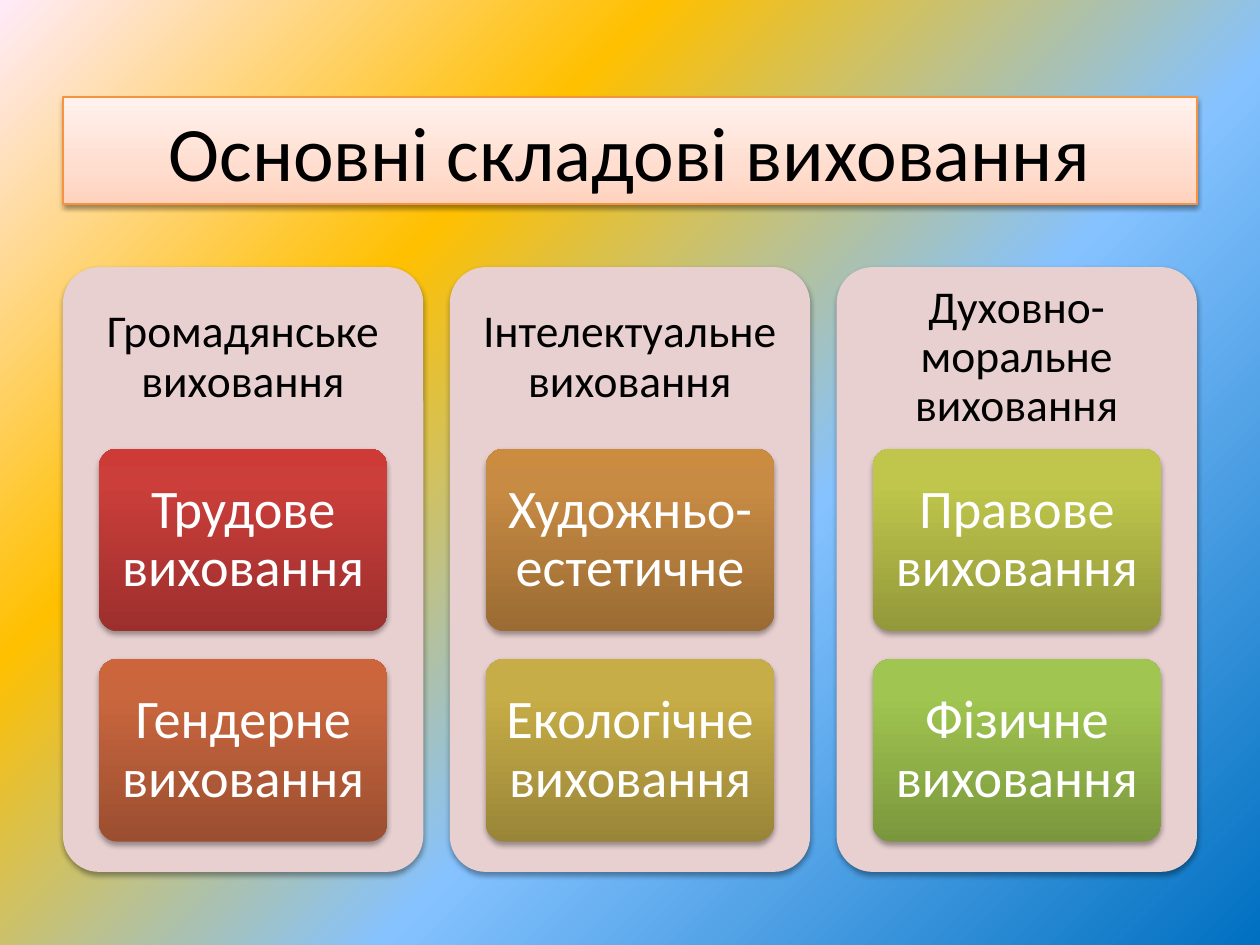
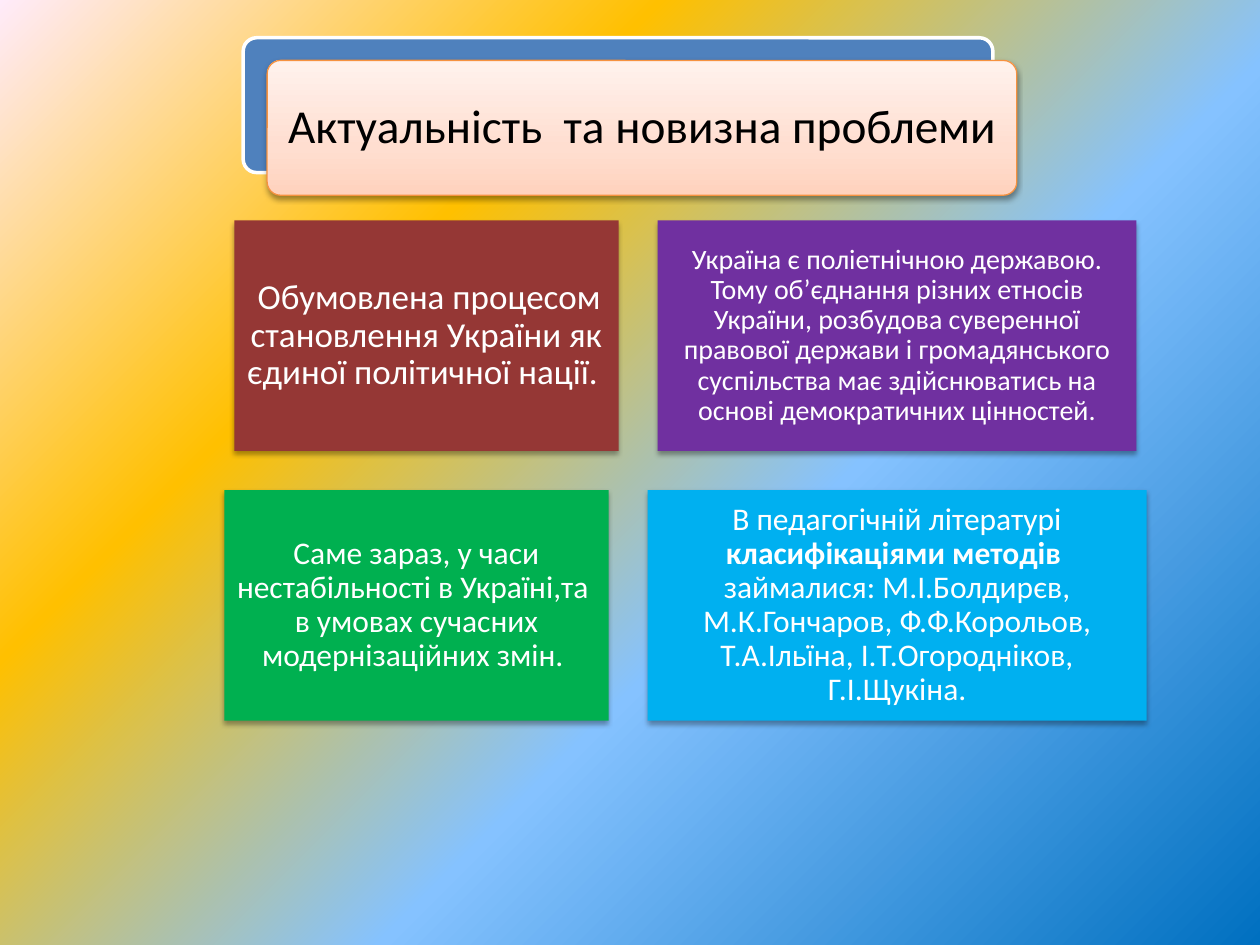
import dataclasses
import typing

import pptx
import pptx.dml.color
import pptx.enum.shapes
import pptx.enum.text
import pptx.oxml
import pptx.oxml.ns
import pptx.util

Inches = pptx.util.Inches
Pt = pptx.util.Pt
qn = pptx.oxml.ns.qn
MSO_SHAPE = pptx.enum.shapes.MSO_SHAPE
Stops = tuple[tuple[int, str], ...]
Fill = typing.Union[str, Stops]


@dataclasses.dataclass(frozen=True)
class Theme:
    font: str = "Calibri"
    dark: str = "000000"
    light: str = "FFFFFF"
    column: str = "E8D0D0"
    backing: str = "4F81BD"
    peach_line: str = "F69240"
    peach: Stops = ((0, "FFD2BD"), (35, "FFDED0"), (100, "FFF2ED"))
    backdrop: Stops = ((0, "0070C0"), (40, "85C2FF"), (70, "FFC000"), (100, "FFEBFA"))
    title: int = 44
    cell: int = 31
    plate: int = 27
    heading: int = 26
    corner: float = 0.1
    line_spacing: float = 0.9


T = Theme()


@dataclasses.dataclass(frozen=True)
class Box:
    x: float
    y: float
    w: float
    h: float


@dataclasses.dataclass(frozen=True)
class Shadow:
    alpha: int = 35
    dist: float = 1.8
    blur: float = 3.1


@dataclasses.dataclass(frozen=True)
class Span:
    text: str
    size: int
    bold: bool = False


@dataclasses.dataclass(frozen=True)
class Cell:
    text: str
    stops: Stops


@dataclasses.dataclass(frozen=True)
class Column:
    heading: str
    cells: tuple[Cell, ...]


@dataclasses.dataclass(frozen=True)
class Panel:
    width: float
    color: str
    spans: tuple[Span, ...]
    inset: float = 0.07


SOFT = Shadow()
PEACH_SHADOW = Shadow(alpha=38, dist=1.6)


def rgb(color: str) -> pptx.dml.color.RGBColor:
    return pptx.dml.color.RGBColor.from_string(color)


# ---- Shared drawing helpers ----
def set_gradient(owner, fill, stops: Stops, geometry: str) -> None:
    """Give a fill any number of stops; geometry is its a:lin or a:path element."""
    fill.gradient()
    old = next(owner.iter(qn("a:gradFill")))
    marks = "".join(
        f'<a:gs pos="{pos * 1000}"><a:srgbClr val="{color}"/></a:gs>' for pos, color in stops
    )
    new = pptx.oxml.parse_xml(
        f'<a:gradFill {pptx.oxml.ns.nsdecls("a")} rotWithShape="1">'
        f"<a:gsLst>{marks}</a:gsLst>{geometry}</a:gradFill>"
    )
    old.getparent().replace(old, new)


def set_shadow(sp, shadow: typing.Optional[Shadow]) -> None:
    sp.shadow.inherit = False
    if shadow is None:
        return
    effects = sp._element.spPr.find(qn("a:effectLst"))
    effects.append(pptx.oxml.parse_xml(
        f'<a:outerShdw {pptx.oxml.ns.nsdecls("a")} blurRad="{Pt(shadow.blur)}" '
        f'dist="{Pt(shadow.dist)}" dir="5400000" rotWithShape="0"><a:srgbClr val="000000">'
        f'<a:alpha val="{shadow.alpha * 1000}"/></a:srgbClr></a:outerShdw>'
    ))


def add_box(s, box: Box, fill: Fill, rounded: bool = False,
            line: typing.Optional[tuple[str, float]] = None,
            shadow: typing.Optional[Shadow] = SOFT):
    kind = MSO_SHAPE.ROUNDED_RECTANGLE if rounded else MSO_SHAPE.RECTANGLE
    sp = s.shapes.add_shape(kind, Inches(box.x), Inches(box.y), Inches(box.w), Inches(box.h))
    if rounded:
        sp.adjustments[0] = T.corner
    if isinstance(fill, str):
        sp.fill.solid()
        sp.fill.fore_color.rgb = rgb(fill)
    else:
        set_gradient(sp._element.spPr, sp.fill, fill, '<a:lin ang="16200000" scaled="0"/>')
    if line:
        sp.line.color.rgb = rgb(line[0])
        sp.line.width = Pt(line[1])
    else:
        sp.line.fill.background()
    set_shadow(sp, shadow)
    return sp


def corner_inset(box: Box) -> float:
    """Distance by which a rounded rectangle already indents its text."""
    return 0.29 * T.corner * min(box.w, box.h)


def write(sp, spans: tuple[Span, ...], color: str, inset: tuple[float, float],
          bottom: typing.Optional[float] = None, spacing: float = T.line_spacing) -> None:
    side, top = inset
    tf = sp.text_frame
    tf.word_wrap = True
    tf.vertical_anchor = pptx.enum.text.MSO_ANCHOR.MIDDLE
    tf.margin_left = tf.margin_right = Inches(side)
    tf.margin_top = Inches(top)
    tf.margin_bottom = Inches(top if bottom is None else bottom)
    p = tf.paragraphs[0]
    p.alignment = pptx.enum.text.PP_ALIGN.CENTER
    p.line_spacing = spacing
    for span in spans:
        r = p.add_run()
        r.text = span.text
        r.font.name = T.font
        r.font.size = Pt(span.size)
        r.font.bold = span.bold
        r.font.color.rgb = rgb(color)


def new_slide(prs):
    s = prs.slides.add_slide(prs.slide_layouts[6])
    set_gradient(s._element, s.background.fill, T.backdrop,
                 '<a:path path="circle"><a:fillToRect l="100000" t="100000"/></a:path>')
    return s


# ---- Slide 1: components of upbringing ----
COLUMNS = (
    Column("Громадянське виховання", (
        Cell("Трудове виховання", ((0, "9C2F2D"), (80, "CB3E3A"), (100, "CE3B37"))),
        Cell("Гендерне виховання", ((0, "9B4E30"), (80, "C9663E"), (100, "CD653C"))),
    )),
    Column("Інтелектуальне виховання", (
        Cell("Художньо-естетичне", ((0, "9A6B33"), (80, "C88B43"), (100, "CC8C40"))),
        Cell("Екологічне виховання", ((0, "998537"), (80, "C7AD47"), (100, "CAAF45"))),
    )),
    Column("Духовно-моральне виховання", (
        Cell("Правове виховання", ((0, "93983A"), (80, "BFC64B"), (100, "C2C949"))),
        Cell("Фізичне виховання", ((0, "7B973D"), (80, "A0C550"), (100, "A2C84E"))),
    )),
)


def add_column(s, box: Box, column: Column) -> None:
    heading_h, cell_w, cell_h, row_pitch = 1.44, 2.29, 1.45, 1.67
    inset = 0.11 - corner_inset(box)
    sp = add_box(s, box, T.column, rounded=True)
    write(sp, (Span(column.heading, T.heading),), T.dark, (inset, inset),
          bottom=box.h - heading_h + inset)
    for row, cell in enumerate(column.cells):
        cell_box = Box(box.x + (box.w - cell_w) / 2, box.y + heading_h + row * row_pitch,
                       cell_w, cell_h)
        indent = corner_inset(cell_box)
        sp = add_box(s, cell_box, cell.stops, rounded=True)
        write(sp, (Span(cell.text, T.cell),), T.light, (0.09 - indent, 0.06 - indent))


def build_components(prs) -> None:
    s = new_slide(prs)
    sp = add_box(s, Box(0.5, 0.77, 9, 0.85), T.peach, line=(T.peach_line, 0.75),
                 shadow=PEACH_SHADOW)
    write(sp, (Span("Основні складові виховання", T.title),), T.dark, (0.1, 0.05), spacing=1.0)
    for i, column in enumerate(COLUMNS):
        add_column(s, Box(0.5 + i * 3.07, 2.12, 2.86, 4.8), column)


# ---- Slide 2: relevance and novelty ----
PANEL_ROWS = (
    (
        Panel(3.05, "953735", (
            Span(" ", 14),
            Span("Обумовлена процесом становлення України як єдиної політичної нації. ", 20),
        ), inset=0.06),
        Panel(3.8, "7030A0", (
            Span("Україна є поліетнічною державою. Тому об’єднання різних етносів України, "
                 "розбудова суверенної правової держави і громадянського суспільства має "
                 "здійснюватись на основі демократичних цінностей.", 16),
        )),
    ),
    (
        Panel(3.05, "00B050", (
            Span("Саме зараз, у часи нестабільності в Україні,та  в умовах сучасних "
                 "модернізаційних змін. ", 18),
        )),
        Panel(3.96, "00B0F0", (
            Span("В педагогічній літературі ", 18),
            Span("класифікаціями методів", 18, bold=True),
            Span("  займалися: М.І.Болдирєв, М.К.Гончаров, Ф.Ф.Корольов, Т.А.Ільїна, "
                 "І.Т.Огородніков, Г.І.Щукіна.", 18),
        )),
    ),
)


def add_panel_row(s, top: float, panels: tuple[Panel, ...]) -> None:
    """Lay panels side by side, centred on a common axis."""
    axis, gap, height = 5.44, 0.31, 1.83
    x = axis - (sum(panel.width for panel in panels) + gap * (len(panels) - 1)) / 2
    for panel in panels:
        sp = add_box(s, Box(x, top, panel.width, height), panel.color)
        write(sp, panel.spans, T.light, (panel.inset, panel.inset))
        x += panel.width + gap


def build_relevance(prs) -> None:
    s = new_slide(prs)
    plate = Box(2.12, 0.48, 5.95, 1.07)
    add_box(s, Box(plate.x - 0.19, plate.y - 0.18, plate.w, plate.h), T.backing,
            rounded=True, line=(T.light, 2), shadow=None)
    sp = add_box(s, plate, T.peach, rounded=True, line=(T.peach_line, 0.75),
                 shadow=PEACH_SHADOW)
    inset = 0.11 - corner_inset(plate)
    write(sp, (Span("Актуальність  та новизна проблеми", T.plate),), T.dark, (inset, inset))
    for row, panels in enumerate(PANEL_ROWS):
        add_panel_row(s, 1.75 + row * 2.14, panels)


def main() -> None:
    prs = pptx.Presentation()
    prs.slide_width, prs.slide_height = Inches(10), Inches(7.5)
    build_components(prs)
    build_relevance(prs)
    prs.save("out.pptx")


if __name__ == "__main__":
    main()
